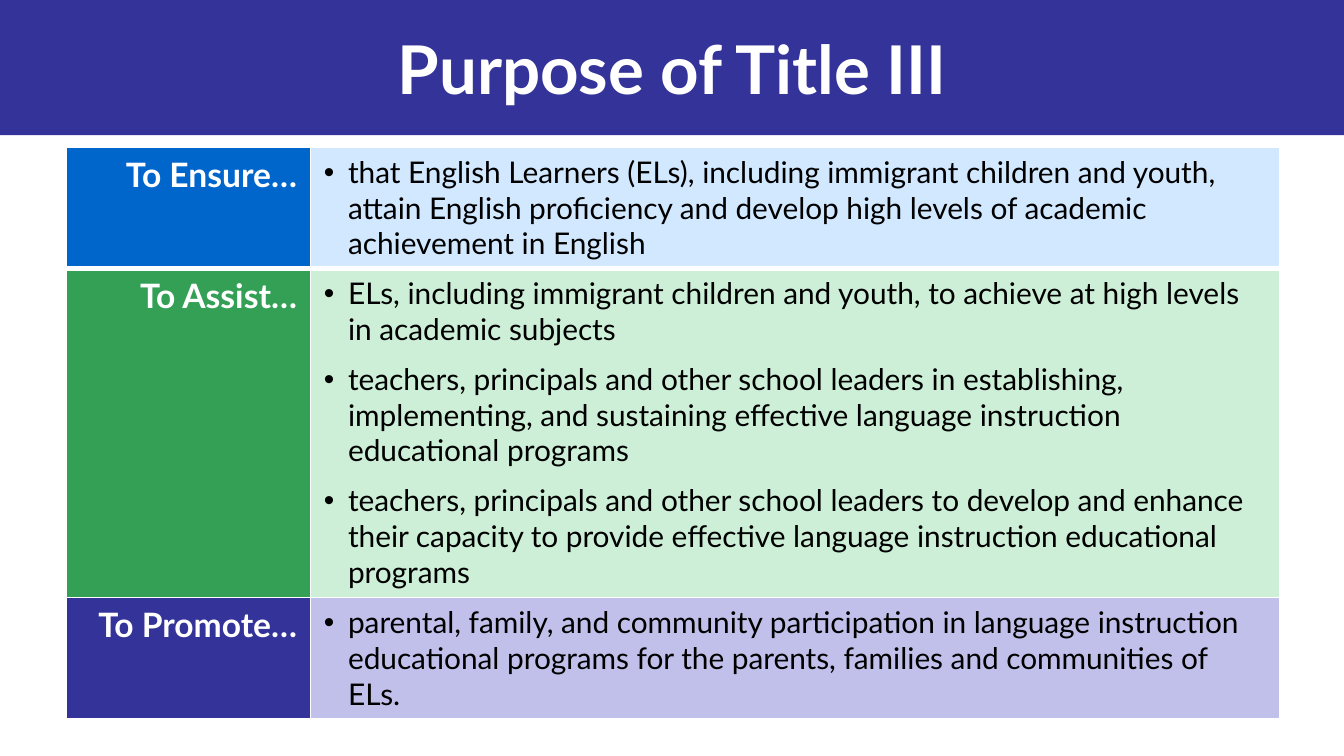
"""Build the slide on the purpose of Title III."""
from dataclasses import dataclass

from lxml import etree
from pptx import Presentation
from pptx import util as u
from pptx.dml.color import RGBColor
from pptx.enum import shapes, text
from pptx.oxml.ns import qn

WIDTH = u.Inches(10)
HEIGHT = WIDTH * 9 // 16
FONT, WHITE, BLACK, INDIGO = "Lato", "FFFFFF", "000000", "333399"
BAND = 17.9
TABLE_LEFT, TABLE_TOP = 4.9, 19.5
COLUMNS = (18.2, 72.1)


@dataclass
class Purpose:
    """One table row: a label, its aims, its colours and its percentage height."""
    label: str
    aims: tuple[str, ...]
    dark: str
    light: str
    height: float = 15.8


PURPOSES = (
    Purpose("To Ensure…", (
        "that English Learners (ELs), including immigrant children and youth, attain English "
        "proficiency and develop high levels of academic achievement in English",
    ), "0066CC", "D1E8FF"),
    Purpose("To Assist…", (
        "ELs, including immigrant children and youth, to achieve at high levels in academic subjects",
        "teachers, principals and other school leaders in establishing, implementing, and "
        "sustaining effective language instruction educational programs",
        "teachers, principals and other school leaders to develop and enhance their capacity to "
        "provide effective language instruction educational programs",
    ), "33A056", "CDEFD8", 43.3),
    Purpose("To Promote…", (
        "parental, family, and community participation in language instruction educational "
        "programs for the parents, families and communities of ELs.",
    ), INDIGO, "C0C0EA"),
)


def across(percent: float) -> int:
    """Turn a percentage of the slide's width into a length."""
    return round(WIDTH * percent / 100)


def down(percent: float) -> int:
    """Turn a percentage of the slide's height into a length."""
    return round(HEIGHT * percent / 100)


def paint(fill, colour: str) -> None:
    """Give a fill one solid colour."""
    fill.solid()
    fill.fore_color.rgb = RGBColor.from_string(colour)


def write(paragraph, words: str, size: float, colour: str, bold: bool) -> None:
    """Add one formatted span to a paragraph."""
    span = paragraph.add_run()
    span.text = words
    span.font.name = FONT
    span.font.size = u.Pt(size)
    span.font.bold = bold
    paint(span.font.fill, colour)


def add_bullet(paragraph) -> None:
    """Give a paragraph a hanging round bullet."""
    properties = paragraph._p.get_or_add_pPr()
    properties.set("marL", str(u.Inches(0.18)))
    properties.set("indent", str(u.Inches(-0.18)))
    etree.SubElement(properties, qn("a:buFont"), typeface="Arial")
    etree.SubElement(properties, qn("a:buChar"), char="•")


def add_borders(cell, bottom: float, top: float) -> None:
    """Rule all four sides of a cell in white."""
    properties = cell._tc.get_or_add_tcPr()
    for side, points in (("L", 1), ("R", 1), ("T", top), ("B", bottom)):
        line = etree.SubElement(properties, qn(f"a:ln{side}"), w=str(u.Pt(points)))
        solid = etree.SubElement(line, qn("a:solidFill"))
        etree.SubElement(solid, qn("a:srgbClr"), val=WHITE)


def add_title(page, words: str) -> None:
    """Draw the heading band and its centred title."""
    band = page.shapes.add_shape(
        shapes.MSO_SHAPE.RECTANGLE, across(-0.1), 0, across(100.1), down(BAND))
    band.shadow.inherit = False
    paint(band.fill, INDIGO)
    band.line.fill.background()
    box = page.shapes.add_textbox(0, 0, across(100), down(BAND))
    frame = box.text_frame
    frame.word_wrap = True
    frame.vertical_anchor = text.MSO_ANCHOR.MIDDLE
    paragraph = frame.paragraphs[0]
    paragraph.alignment = text.PP_ALIGN.CENTER
    write(paragraph, words, 36, WHITE, True)


def fill_row(cells, purpose: Purpose, bottom: float, top: float) -> None:
    """Write one purpose into its label cell and its aims cell."""
    label, aims = cells
    for cell, colour in ((label, purpose.dark), (aims, purpose.light)):
        add_borders(cell, bottom, top)
        paint(cell.fill, colour)
    paragraph = label.text_frame.paragraphs[0]
    paragraph.alignment = text.PP_ALIGN.RIGHT
    write(paragraph, purpose.label, 18, WHITE, True)
    frame = aims.text_frame
    for index, aim in enumerate(purpose.aims):
        paragraph = frame.add_paragraph() if index else frame.paragraphs[0]
        add_bullet(paragraph)
        if index:
            paragraph.space_before = u.Pt(6)
        paragraph.space_after = u.Pt(1.8)
        write(paragraph, aim, 16, BLACK, False)


def add_purposes(page) -> None:
    """Draw the table of purposes."""
    frame = page.shapes.add_table(
        len(PURPOSES), len(COLUMNS), across(TABLE_LEFT), down(TABLE_TOP),
        across(sum(COLUMNS)), down(sum(purpose.height for purpose in PURPOSES)))
    table = frame.table
    table.horz_banding = False
    for column, share in zip(table.columns, COLUMNS):
        column.width = across(share)
    for index, (row, purpose) in enumerate(zip(table.rows, PURPOSES)):
        row.height = down(purpose.height)
        fill_row(row.cells, purpose, 1 if index else 3, 3 if index == 1 else 1)


def main() -> None:
    """Build and save the deck."""
    deck = Presentation()
    deck.slide_width, deck.slide_height = WIDTH, HEIGHT
    page = deck.slides.add_slide(deck.slide_layouts[6])
    add_title(page, "Purpose of Title III")
    add_purposes(page)
    deck.save("out.pptx")


if __name__ == "__main__":
    main()
